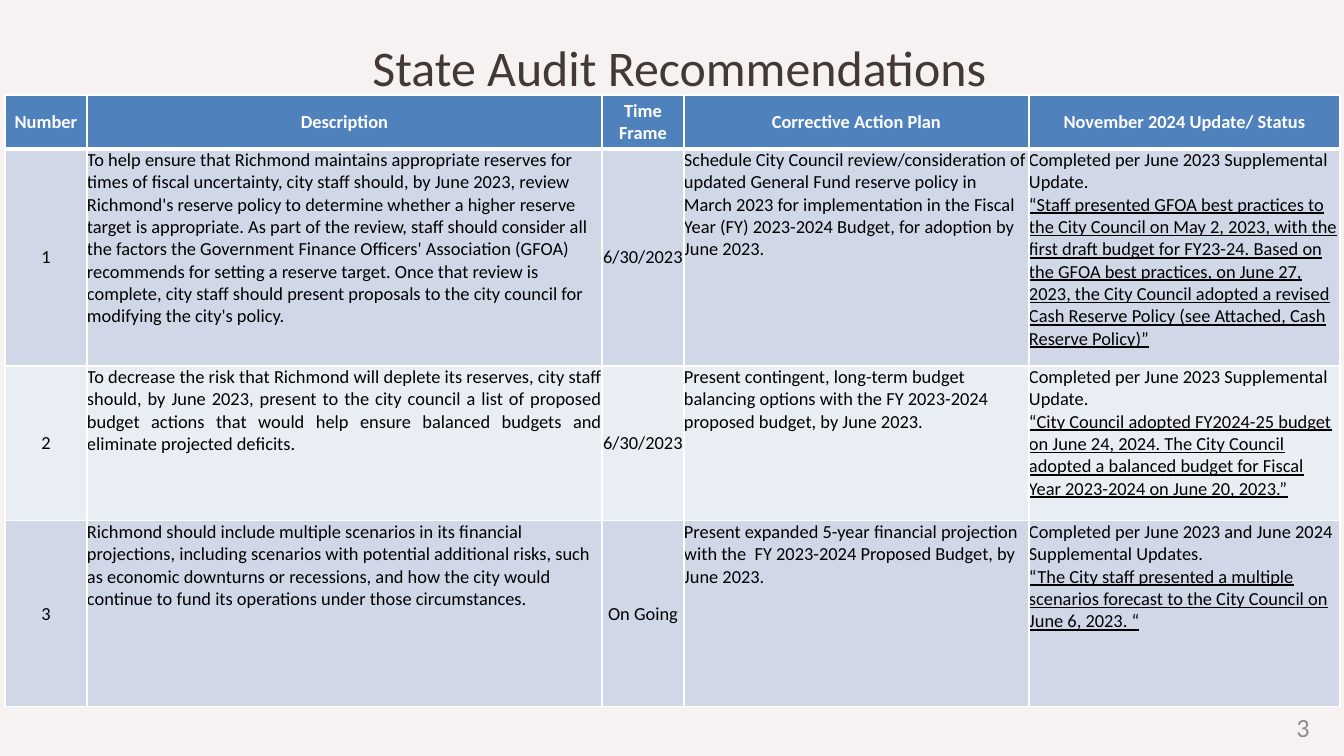
from typing import NamedTuple

from lxml.etree import SubElement
from pptx import Presentation
from pptx.dml.color import RGBColor
from pptx.enum.text import MSO_ANCHOR, MSO_AUTO_SIZE, PP_ALIGN
from pptx.oxml.ns import qn
from pptx.table import _Cell
from pptx.text.text import TextFrame
from pptx.util import Emu, Pt

EMU_PER_PX = 914400 / 94.5
FONT = "Calibri"

BACKGROUND = RGBColor(0xF6, 0xF2, 0xF1)
TITLE_BROWN = RGBColor(0x43, 0x38, 0x33)
PAGE_GREY = RGBColor(0x8C, 0x8C, 0x8C)
HEADER_BLUE = RGBColor(0x4F, 0x81, 0xBD)
BAND_DARK = RGBColor(0xD0, 0xD8, 0xE8)
BAND_LIGHT = RGBColor(0xE9, 0xED, 0xF4)
WHITE = RGBColor(0xFF, 0xFF, 0xFF)
BLACK = RGBColor(0x00, 0x00, 0x00)

COLUMN_WIDTHS = (82, 515, 82, 345, 311)
ROW_HEIGHTS = (54, 217, 155, 186)
HEADINGS = ("Number", "Description", "Time Frame", "Corrective Action Plan",
            "November 2024 Update/ Status")


class Recommendation(NamedTuple):
    description: str
    time_frame: str
    action_plan: str
    status: str
    status_quote: str
    description_align: PP_ALIGN = PP_ALIGN.LEFT


RECOMMENDATIONS = (
    Recommendation(
        "To help ensure that Richmond maintains appropriate reserves for times of fiscal "
        "uncertainty, city staff should, by June 2023, review Richmond's reserve policy to "
        "determine whether a higher reserve target is appropriate. As part of the review, staff "
        "should consider all the factors the Government Finance Officers' Association (GFOA) "
        "recommends for setting a reserve target. Once that review is complete, city staff should "
        "present proposals to the city council for modifying the city's policy.",
        "6/30/2023",
        "Schedule City Council review/consideration of updated General Fund reserve policy in "
        "March 2023 for implementation in the Fiscal Year (FY) 2023-2024 Budget, for adoption by "
        "June 2023.",
        "Completed per June 2023 Supplemental Update.",
        "“Staff presented GFOA best practices to the City Council on May 2, 2023, with the first "
        "draft budget for FY23-24. Based on the GFOA best practices, on June 27, 2023, the City "
        "Council adopted a revised Cash Reserve Policy (see Attached, Cash Reserve Policy)”",
    ),
    Recommendation(
        "To decrease the risk that Richmond will deplete its reserves, city staff should, by June "
        "2023, present to the city council a list of proposed budget actions that would help "
        "ensure balanced budgets and eliminate projected deficits. ",
        "6/30/2023",
        "Present contingent, long-term budget balancing options with the FY 2023-2024 proposed "
        "budget, by June 2023.",
        "Completed per June 2023 Supplemental Update.",
        "“City Council adopted FY2024-25 budget on June 24, 2024. The City Council adopted a "
        "balanced budget for Fiscal Year 2023-2024 on June 20, 2023.”",
        PP_ALIGN.JUSTIFY,
    ),
    Recommendation(
        "Richmond should include multiple scenarios in its financial projections, including "
        "scenarios with potential additional risks, such as economic downturns or recessions, and "
        "how the city would continue to fund its operations under those circumstances.",
        "On Going",
        "Present expanded 5-year financial projection with the  FY 2023-2024 Proposed Budget, by "
        "June 2023.",
        "Completed per June 2023 and June 2024 Supplemental Updates.",
        "“The City staff presented a multiple scenarios forecast to the City Council on June 6, "
        "2023. “",
    ),
)


def px(length: int) -> Emu:
    return Emu(round(length * EMU_PER_PX))


def write(frame: TextFrame, text: str, *, size: int = 14, color: RGBColor = BLACK,
          align: PP_ALIGN = PP_ALIGN.LEFT, bold: bool = False, underline: bool = False,
          line_spacing: float | None = None, append: bool = False) -> None:
    """Write one paragraph: the first of the frame, or a further one with append."""
    paragraph = frame.add_paragraph() if append else frame.paragraphs[0]
    paragraph.alignment = align
    if line_spacing:
        paragraph.line_spacing = Pt(line_spacing)
    run = paragraph.add_run()
    run.text = text
    run.font.name = FONT
    run.font.size = Pt(size)
    run.font.bold = bold
    run.font.underline = underline
    run.font.color.rgb = color


def style_cell(cell: _Cell, fill: RGBColor, *, centred: bool,
               top: int = 1, bottom: int = 1) -> None:
    """Set the borders (widths in points), fill, margins and anchor of a cell."""
    properties = cell._tc.get_or_add_tcPr()
    for side, width in (("L", 1), ("R", 1), ("T", top), ("B", bottom)):
        line = SubElement(properties, qn(f"a:ln{side}"), w=str(Pt(width)))
        solid = SubElement(line, qn("a:solidFill"))
        SubElement(solid, qn("a:srgbClr"), val=str(WHITE))
    cell.fill.solid()
    cell.fill.fore_color.rgb = fill
    cell.margin_left = cell.margin_right = cell.margin_top = cell.margin_bottom = 0
    cell.vertical_anchor = MSO_ANCHOR.MIDDLE if centred else MSO_ANCHOR.TOP


def add_title(slide) -> None:
    title = slide.shapes.title
    title.left, title.top, title.width, title.height = px(60), px(26), px(1239), px(69)
    frame = title.text_frame
    frame.margin_left = frame.margin_right = frame.margin_top = frame.margin_bottom = 0
    frame.vertical_anchor = MSO_ANCHOR.TOP
    frame.auto_size = MSO_AUTO_SIZE.SHAPE_TO_FIT_TEXT
    write(frame, "State Audit Recommendations", size=38, color=TITLE_BROWN,
          align=PP_ALIGN.CENTER, line_spacing=53.7)


def add_recommendations(slide) -> None:
    table = slide.shapes.add_table(
        len(ROW_HEIGHTS), len(COLUMN_WIDTHS), px(5), px(95),
        px(sum(COLUMN_WIDTHS)), px(sum(ROW_HEIGHTS))).table
    for column, width in zip(table.columns, COLUMN_WIDTHS):
        column.width = px(width)
    for row, height in zip(table.rows, ROW_HEIGHTS):
        row.height = px(height)

    for column, heading in enumerate(HEADINGS):
        cell = table.cell(0, column)
        style_cell(cell, HEADER_BLUE, centred=True, bottom=3)
        write(cell.text_frame, heading, color=WHITE, align=PP_ALIGN.CENTER, bold=True)

    for number, item in enumerate(RECOMMENDATIONS, start=1):
        entries = (
            (str(number), PP_ALIGN.CENTER),
            (item.description, item.description_align),
            (item.time_frame, PP_ALIGN.CENTER),
            (item.action_plan, PP_ALIGN.LEFT),
            (item.status, PP_ALIGN.LEFT),
        )
        band = BAND_DARK if number % 2 else BAND_LIGHT
        for column, (text, align) in enumerate(entries):
            cell = table.cell(number, column)
            style_cell(cell, band, centred=align == PP_ALIGN.CENTER,
                       top=3 if number == 1 else 1)
            write(cell.text_frame, text, align=align)
        write(table.cell(number, len(entries) - 1).text_frame, item.status_quote,
              underline=True, append=True)


def add_page_number(slide) -> None:
    frame = slide.shapes.add_textbox(px(1099), px(708), px(220), px(38)).text_frame
    frame.word_wrap = True
    frame.vertical_anchor = MSO_ANCHOR.MIDDLE
    write(frame, "3", size=20, color=PAGE_GREY, align=PP_ALIGN.RIGHT)


def main() -> None:
    presentation = Presentation()
    presentation.slide_width, presentation.slide_height = px(1344), px(756)
    slide = presentation.slides.add_slide(presentation.slide_layouts.get_by_name("Title Only"))
    slide.background.fill.solid()
    slide.background.fill.fore_color.rgb = BACKGROUND
    add_title(slide)
    add_recommendations(slide)
    add_page_number(slide)
    presentation.save("out.pptx")


if __name__ == "__main__":
    main()
